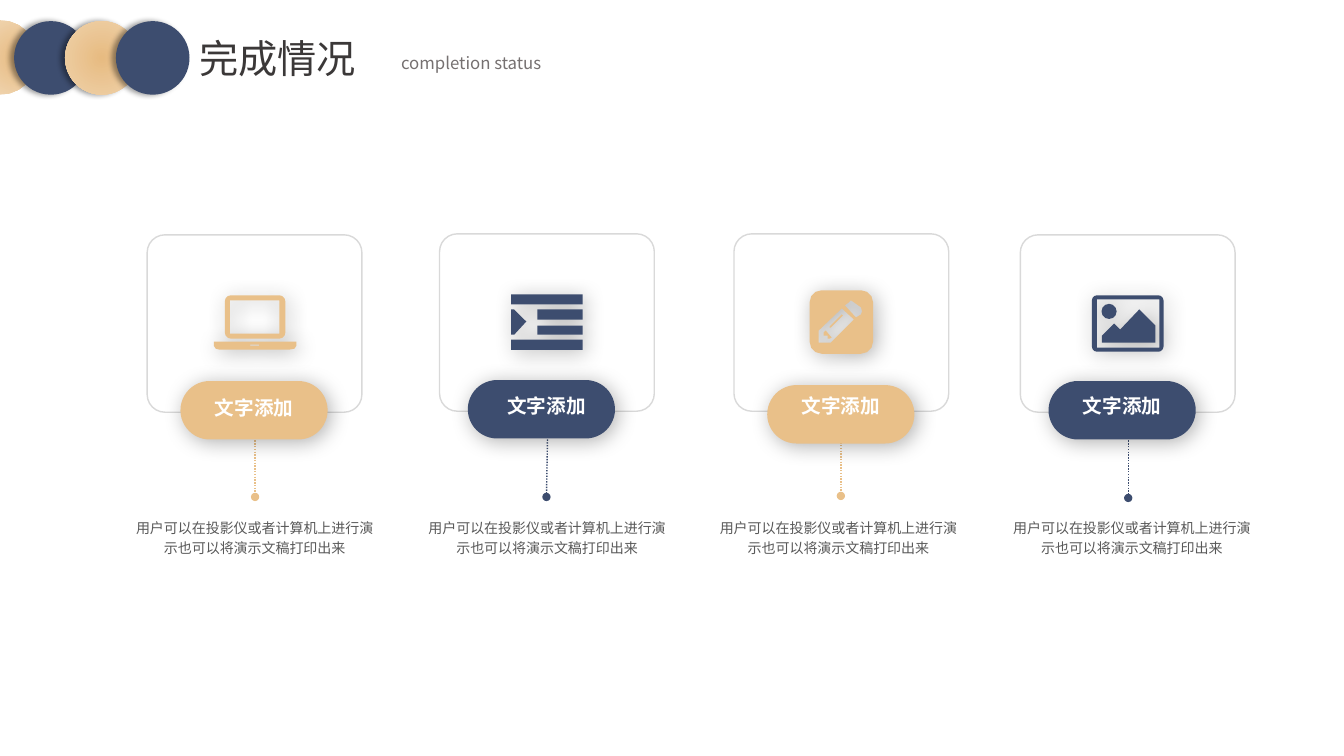
import dataclasses
import math
import typing

import lxml.etree
import pptx
import pptx.dml.color
import pptx.enum.dml
import pptx.enum.shapes
import pptx.enum.text
import pptx.oxml.ns
import pptx.util

Inches = pptx.util.Inches
KIND = pptx.enum.shapes.MSO_SHAPE
ALIGN = pptx.enum.text.PP_ALIGN
Point = tuple[float, float]
Ring = list[Point]


@dataclasses.dataclass(frozen=True)
class Theme:
    font: str = "Noto Sans CJK SC"
    gold: str = "E9C089"
    navy: str = "3D4D6F"
    core: str = "E7BB81"
    rim: str = "EFD2AB"
    frame: str = "D9D9D9"
    title: str = "3B3838"
    sub: str = "767171"
    note: str = "595959"
    white: str = "FFFFFF"
    black: str = "000000"
    title_size: int = 28
    label_size: int = 14
    sub_size: int = 12
    note_size: int = 10


@dataclasses.dataclass(frozen=True)
class Shade:
    alpha: int
    blur: int
    gap: int
    angle: int


@dataclasses.dataclass(frozen=True)
class Card:
    color: str
    frame: Point
    pill: Point
    label: Point
    note: float
    stem: tuple[Point, Point]
    icon: list[Ring]


THEME = Theme()
DISC_SHADE = Shade(40, 4, 3, 180)
CARD_SHADE = Shade(30, 15, 3, 45)
LABEL = "文字添加"
NOTE = "用户可以在投影仪或者计算机上进行演示也可以将演示文稿打印出来"


def arc(x: float, y: float, r: float, start: int, end: int, step: int = 30) -> Ring:
    """Points on a circle between two angles in degrees."""
    turns = [math.radians(a) for a in range(start, end + 1, step)]
    return [(x + r * math.cos(t), y + r * math.sin(t)) for t in turns]


def box(x: float, y: float, w: float, h: float) -> Ring:
    return [(x, y), (x + w, y), (x + w, y + h), (x, y + h)]


def soft_box(x: float, y: float, w: float, h: float, r: float) -> Ring:
    """Outline of a box with round corners."""
    spots = box(x + w - r, y + h - r, 2 * r - w, 2 * r - h)
    return [p for i, (a, b) in enumerate(spots)
            for p in arc(a, b, r, 90 * i, 90 * i + 90)]


# Icons, as lists of rings; a ring inside another is a hole
LAPTOP = [
    soft_box(2.23, 2.93, 0.6, 0.43, 0.06), box(2.28, 2.98, 0.49, 0.33),
    [(2.12, 3.39), (2.94, 3.39), (2.94, 3.43), (2.92, 3.46), (2.86, 3.47),
     (2.18, 3.47), (2.14, 3.46), (2.12, 3.43)],
    box(2.48, 3.42, 0.09, 0.01),
]
INDENT = [
    box(5.07, 2.92, 0.71, 0.1), box(5.07, 3.37, 0.71, 0.1),
    box(5.33, 3.07, 0.45, 0.1), box(5.33, 3.23, 0.45, 0.09),
    [(5.07, 3.07), (5.1, 3.07), (5.22, 3.19), (5.1, 3.32), (5.07, 3.32)],
]
PENCIL = [
    soft_box(8.03, 2.88, 0.63, 0.63, 0.12),
    [(8.47, 3.17), (8.35, 3.06), (8.12, 3.28), (8.12, 3.4), (8.24, 3.4)],
    [(8.25, 3.35), (8.23, 3.36), (8.21, 3.36), (8.21, 3.33), (8.17, 3.33),
     (8.17, 3.3), (8.19, 3.28)],
    [(8.36, 3.13), (8.24, 3.25), (8.23, 3.25), (8.23, 3.24), (8.35, 3.12)],
    [(8.54, 3.12), (8.55, 3.09), (8.54, 3.05), (8.47, 3), (8.44, 2.98),
     (8.42, 3), (8.38, 3.03), (8.49, 3.15)],
]
PHOTO = [
    soft_box(10.83, 2.93, 0.71, 0.56, 0.05), box(10.88, 2.97, 0.62, 0.48),
    arc(11, 3.09, 0.075, 0, 330),
    [(11.46, 3.4), (10.93, 3.4), (10.93, 3.33), (11.05, 3.21),
     (11.11, 3.27), (11.3, 3.07), (11.46, 3.23)],
]

CARDS = [
    Card(THEME.gold, (1.46, 2.33), (1.79, 3.78), (1.79, 3.83), 1.22,
         ((2.53, 4.37), (2.53, 4.93)), LAPTOP),
    Card(THEME.navy, (4.36, 2.32), (4.64, 3.77), (4.69, 3.81), 4.12,
         ((5.43, 4.36), (5.42, 4.93)), INDENT),
    Card(THEME.gold, (7.28, 2.32), (7.61, 3.82), (7.61, 3.81), 7.01,
         ((8.34, 4.36), (8.34, 4.92)), PENCIL),
    Card(THEME.navy, (10.12, 2.33), (10.4, 3.78), (10.4, 3.81), 9.92,
         ((11.19, 4.37), (11.19, 4.94)), PHOTO),
]


def rgb(code: str) -> pptx.dml.color.RGBColor:
    return pptx.dml.color.RGBColor.from_string(code)


def child(node: typing.Any, tag: str, **attrs: object) -> typing.Any:
    made = lxml.etree.SubElement(node, pptx.oxml.ns.qn(tag))
    for key, value in attrs.items():
        made.set(key, str(value))
    return made


def paint(shape: typing.Any, color: str | None, shade: Shade | None = None) -> None:
    """Set a flat fill, or the round gold blend when no colour is given."""
    shape.line.fill.background()
    shape.shadow.inherit = False
    if color:
        shape.fill.solid()
        shape.fill.fore_color.rgb = rgb(color)
    else:
        shape.fill.gradient()
        for stop, tone in zip(shape.fill.gradient_stops, (THEME.core, THEME.rim)):
            stop.color.rgb = rgb(tone)
        grad = shape._element.spPr.find(pptx.oxml.ns.qn("a:gradFill"))
        grad.remove(grad.find(pptx.oxml.ns.qn("a:lin")))
        focus = child(grad, "a:path", path="circle")
        child(focus, "a:fillToRect", l=50000, t=50000, r=50000, b=50000)
    if shade:
        effect = shape._element.spPr.find(pptx.oxml.ns.qn("a:effectLst"))
        cast = child(effect, "a:outerShdw", blurRad=pptx.util.Pt(shade.blur),
                     dist=pptx.util.Pt(shade.gap), dir=shade.angle * 60000,
                     algn="ctr", rotWithShape=0)
        tone = child(cast, "a:srgbClr", val=THEME.black)
        child(tone, "a:alpha", val=shade.alpha * 1000)


def add_shape(shapes: typing.Any, kind: typing.Any, at: Point, size: Point) -> typing.Any:
    return shapes.add_shape(kind, *map(Inches, (*at, *size)))


def add_rings(shapes: typing.Any, rings: list[Ring]) -> typing.Any:
    trace = [[(Inches(x), Inches(y)) for x, y in ring] for ring in rings]
    pen = shapes.build_freeform(*trace[0][0])
    for i, ring in enumerate(trace):
        if i:
            pen.move_to(*ring[0])
        pen.add_line_segments(ring[1:], close=True)
    return pen.convert_to_shape()


def add_text(shapes: typing.Any, text: str, at: Point, size: Point, points: int,
             color: str, align: typing.Any = ALIGN.LEFT, bold: bool = False,
             space: float = 1.0) -> None:
    frame = shapes.add_textbox(*map(Inches, (*at, *size))).text_frame
    frame.word_wrap = True
    frame.auto_size = pptx.enum.text.MSO_AUTO_SIZE.SHAPE_TO_FIT_TEXT
    frame.text = text
    line = frame.paragraphs[0]
    line.alignment = align
    line.line_spacing = space
    font = line.runs[0].font
    font.name, font.size, font.bold = THEME.font, pptx.util.Pt(points), bold
    font.color.rgb = rgb(color)
    child(font._element, "a:ea", typeface=THEME.font)


def add_stem(shapes: typing.Any, ends: tuple[Point, Point], color: str) -> None:
    stem = shapes.add_connector(pptx.enum.shapes.MSO_CONNECTOR.STRAIGHT,
                                *map(Inches, (*ends[0], *ends[1])))
    stem.line.color.rgb = rgb(color)
    stem.line.width = pptx.util.Pt(1)
    stem.line.dash_style = pptx.enum.dml.MSO_LINE.ROUND_DOT
    child(stem.line._get_or_add_ln(), "a:tailEnd", type="oval")
    child(stem._element.spPr, "a:effectLst")


def add_card(shapes: typing.Any, card: Card) -> None:
    add_stem(shapes, card.stem, card.color)
    frame = add_shape(shapes, KIND.ROUNDED_RECTANGLE, card.frame, (2.13, 1.76))
    frame.adjustments[0] = 0.1
    frame.shadow.inherit = False
    frame.fill.background()
    frame.line.color.rgb = rgb(THEME.frame)
    frame.line.width = pptx.util.Pt(1)
    pill = add_shape(shapes, KIND.ROUNDED_RECTANGLE, card.pill, (1.46, 0.58))
    pill.adjustments[0] = 0.5
    paint(pill, card.color, CARD_SHADE)
    paint(add_rings(shapes, card.icon), card.color, CARD_SHADE)
    add_text(shapes, NOTE, (card.note, 5.07), (2.61, 0.5), THEME.note_size,
             THEME.note, ALIGN.CENTER, space=1.2)
    add_text(shapes, LABEL, card.label, (1.46, 0.36), THEME.label_size,
             THEME.white, ALIGN.CENTER, True, 1.2)


def main() -> None:
    deck = pptx.Presentation()
    deck.slide_width, deck.slide_height = Inches(13.33), Inches(7.5)
    shapes = deck.slides.add_slide(deck.slide_layouts[6]).shapes

    # Header discs and titles
    paint(add_rings(shapes, [arc(0, 0.57, 0.37, -90, 90, 15)]), None)
    for i, color in enumerate((THEME.navy, None, THEME.navy)):
        disc = add_shape(shapes, KIND.OVAL, (0.14 + 0.505 * i, 0.21), (0.73, 0.73))
        paint(disc, color, DISC_SHADE)
    add_text(shapes, "完成情况", (1.88, 0.29), (2.04, 0.57), THEME.title_size,
             THEME.title, ALIGN.JUSTIFY)
    add_text(shapes, "completion status", (3.88, 0.47), (3.64, 0.3),
             THEME.sub_size, THEME.sub)

    # Four cards
    for card in CARDS:
        add_card(shapes, card)
    deck.save("out.pptx")


if __name__ == "__main__":
    main()
